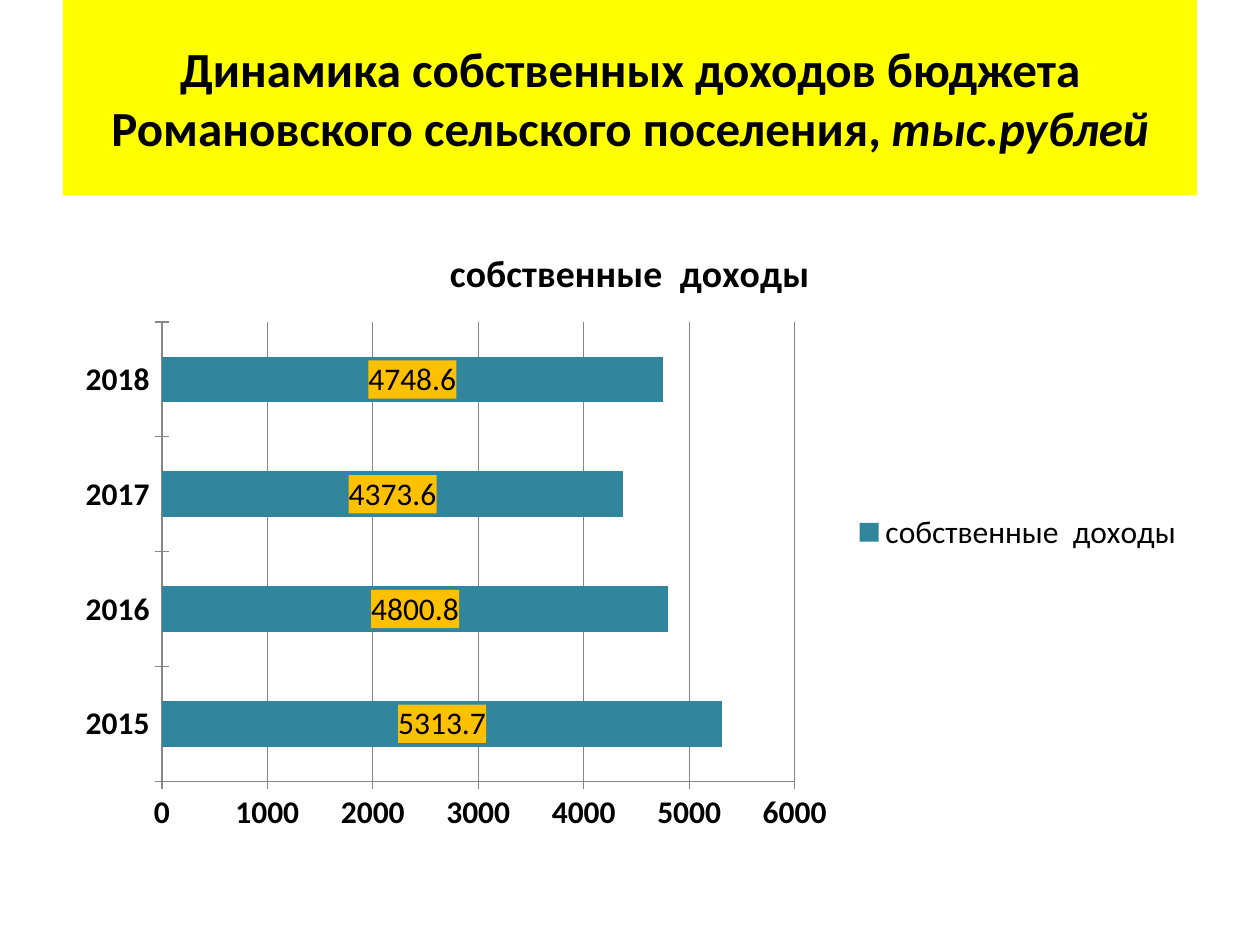
from lxml import etree
from pptx import Presentation
from pptx.chart.data import CategoryChartData
from pptx.dml.color import RGBColor
from pptx.enum.chart import XL_CHART_TYPE, XL_LABEL_POSITION, XL_LEGEND_POSITION, XL_TICK_MARK
from pptx.enum.shapes import MSO_SHAPE
from pptx.enum.text import MSO_ANCHOR, PP_ALIGN
from pptx.oxml import parse_xml
from pptx.oxml.ns import nsdecls, qn
from pptx.util import Pt

YELLOW = RGBColor(0xFF, 0xFF, 0x00)
AMBER = RGBColor(0xFF, 0xC0, 0x00)
TEAL = RGBColor(0x31, 0x85, 0x9C)
GRAY = RGBColor(0x86, 0x86, 0x86)
BLACK = RGBColor(0, 0, 0)
FONT = "Calibri"

INCOME_NAME = "собственные  доходы"
INCOME = {"2015": 5313.7, "2016": 4800.8, "2017": 4373.6, "2018": 4748.6}
HEADING = [
    ("Динамика собственных доходов бюджета Романовского сельского поселения, ", False),
    ("тыс.рублей", True),
]


def style_font(font, size, bold=False):
    font.name = FONT
    font.size = Pt(size)
    font.bold = bold
    font.color.rgb = BLACK


def add_heading(slide, left, top, width, height):
    banner = slide.shapes.add_shape(
        MSO_SHAPE.RECTANGLE, Pt(left), Pt(top), Pt(width), Pt(height))
    banner.shadow.inherit = False
    banner.fill.solid()
    banner.fill.fore_color.rgb = YELLOW
    banner.line.fill.background()

    frame = banner.text_frame
    frame.word_wrap = True
    frame.vertical_anchor = MSO_ANCHOR.MIDDLE
    paragraph = frame.paragraphs[0]
    paragraph.alignment = PP_ALIGN.CENTER
    for text, italic in HEADING:
        run = paragraph.add_run()
        run.text = text
        style_font(run.font, 28, bold=True)
        run.font.italic = italic


def fill_labels(labels, color):
    """Put a solid background behind the data labels."""
    background = parse_xml(
        f'<c:spPr {nsdecls("c", "a")}><a:solidFill><a:srgbClr val="{color}"/>'
        '</a:solidFill></c:spPr>')
    labels.font._element.getparent()
    text_properties = labels._element.find(qn("c:txPr"))
    text_properties.addprevious(background)


def add_income_chart(slide, left, top, width, height):
    data = CategoryChartData()
    data.categories = list(INCOME)
    data.add_series(INCOME_NAME, list(INCOME.values()))
    chart = slide.shapes.add_chart(
        XL_CHART_TYPE.BAR_STACKED, Pt(left), Pt(top), Pt(width), Pt(height), data).chart
    style_font(chart.font, 18)

    # Title and legend
    chart.has_title = True
    run = chart.chart_title.text_frame.paragraphs[0].add_run()
    run.text = INCOME_NAME
    style_font(run.font, 21.6, bold=True)
    chart.chart_title.include_in_layout = False
    chart.has_legend = True
    chart.legend.position = XL_LEGEND_POSITION.RIGHT
    chart.legend.include_in_layout = False
    style_font(chart.legend.font, 18)

    # Axes
    for axis in (chart.category_axis, chart.value_axis):
        axis.major_tick_mark = XL_TICK_MARK.CROSS
        axis.minor_tick_mark = XL_TICK_MARK.NONE
        axis.format.line.color.rgb = GRAY
        style_font(axis.tick_labels.font, 18, bold=True)
    chart.value_axis.minimum_scale = 0
    chart.value_axis.maximum_scale = 6000
    chart.value_axis.major_unit = 1000
    chart.value_axis.has_major_gridlines = True
    chart.value_axis.major_gridlines.format.line.color.rgb = GRAY

    # Bars and their labels
    plot = chart.plots[0]
    plot.gap_width = 150
    plot.overlap = 100
    plot.vary_by_categories = False
    bars = plot.series[0]
    bars.format.fill.solid()
    bars.format.fill.fore_color.rgb = TEAL
    labels = bars.data_labels
    labels.show_value = True
    labels.position = XL_LABEL_POSITION.CENTER
    style_font(labels.font, 18)
    fill_labels(labels, AMBER)


def main():
    presentation = Presentation()
    presentation.slide_width = Pt(720)
    presentation.slide_height = Pt(540)
    slide = presentation.slides.add_slide(presentation.slide_layouts[6])
    add_heading(slide, 36, 0, 648, 111.6)
    add_income_chart(slide, 36, 126, 648, 356.4)
    presentation.save("out.pptx")


if __name__ == "__main__":
    main()
